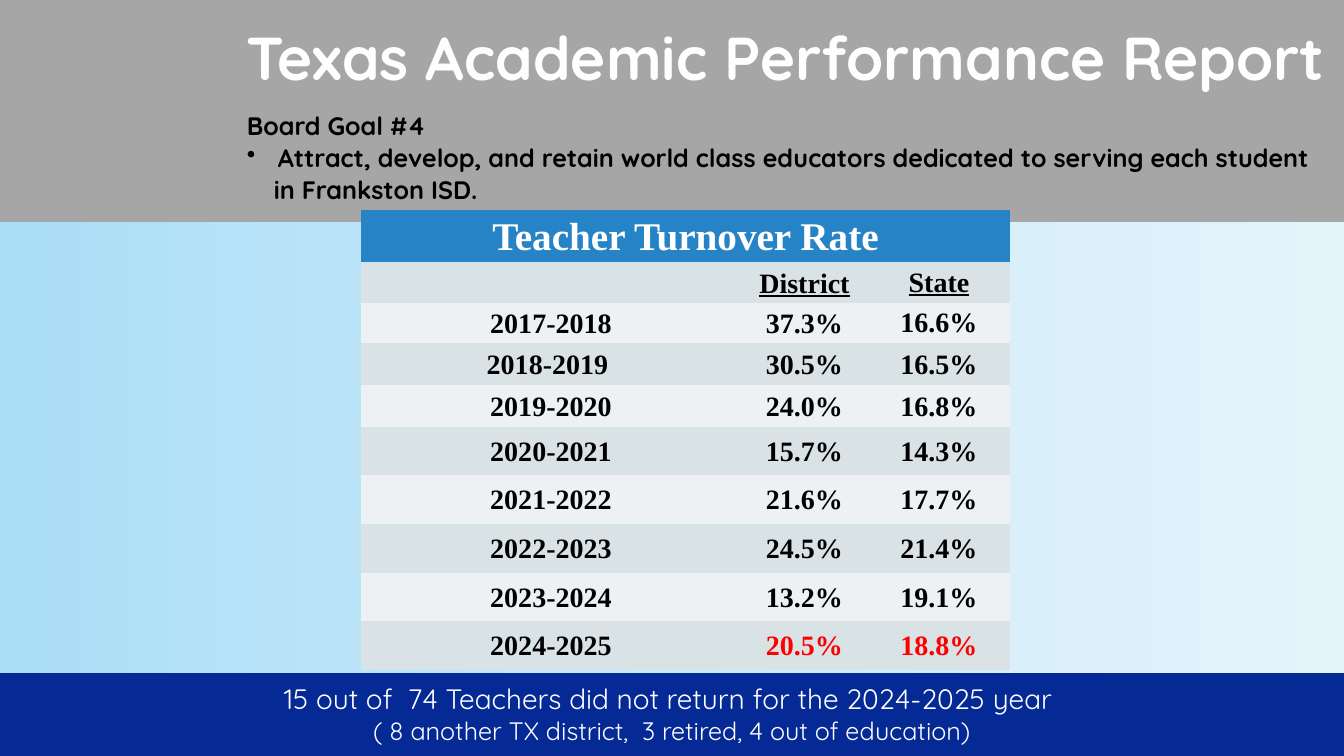
"""Build the teacher turnover slide of an academic performance report."""
from copy import deepcopy
from dataclasses import dataclass

from lxml import etree
from pptx import Presentation
from pptx.dml.color import RGBColor
from pptx.enum.shapes import MSO_SHAPE
from pptx.enum.text import MSO_ANCHOR, PP_ALIGN
from pptx.oxml.ns import qn
from pptx.shapes.autoshape import Shape
from pptx.slide import Slide
from pptx.table import _Cell
from pptx.text.text import _Paragraph
from pptx.util import Emu, Pt

RECTANGLE = MSO_SHAPE.RECTANGLE
LEFT, CENTER = PP_ALIGN.LEFT, PP_ALIGN.CENTER
MIDDLE = MSO_ANCHOR.MIDDLE

SLIDE_WIDTH, SLIDE_HEIGHT = 1344, 756
EMU_PER_PX = 12192000 / SLIDE_WIDTH

NAVY = RGBColor(0x06, 0x2A, 0x95)
GRAY = RGBColor(0xA6, 0xA6, 0xA6)
SKY_STOPS = (
    RGBColor(0xAA, 0xDE, 0xF7),
    RGBColor(0xCA, 0xE9, 0xF9),
    RGBColor(0xE5, 0xF4, 0xFB),
)
OFF_WHITE = RGBColor(0xFE, 0xFE, 0xFE)
WHITE = RGBColor(0xFF, 0xFF, 0xFF)
BLACK = RGBColor(0x00, 0x00, 0x00)
RED = RGBColor(0xFF, 0x00, 0x00)
HEADER_BLUE = RGBColor(0x26, 0x83, 0xC6)
BANDS = (RGBColor(0xD9, 0xE3, 0xE5), RGBColor(0xED, 0xF1, 0xF3))

HEADING_FONT, TABLE_FONT = "Quicksand", "Times New Roman"
PLAIN_TABLE_STYLE = "{2D5ABB26-0587-4C30-8999-92F81FD0307C}"
LINE_SPACING = 1.07
GOAL_HANG, GOAL_INDENT = 31, 27
CELL_MARGIN = 7

COLUMN_WIDTHS = (380, 127, 142)
ROW_HEIGHTS = (52, 41, 40, 42, 42, 48, 49, 49, 48, 49)
TABLE_ROWS = (
    ("", "District", "State"),
    ("2017-2018", "37.3%", "16.6%"),
    ("2018-2019 ", "30.5%", "16.5%"),
    ("2019-2020", "24.0%", "16.8%"),
    ("2020-2021", "15.7%", "14.3%"),
    ("2021-2022", "21.6%", "17.7%"),
    ("2022-2023", "24.5%", "21.4%"),
    ("2023-2024", "13.2%", "19.1%"),
    ("2024-2025", "20.5%", "18.8%"),
)


@dataclass(frozen=True)
class Line:
    """One paragraph of text with its style."""

    text: str
    size: float
    color: RGBColor
    font: str = HEADING_FONT
    bold: bool = True
    underline: bool = False
    align: PP_ALIGN = LEFT
    spacing: float = 1.0
    indent: int = 0
    bullet: str = ""


@dataclass(frozen=True)
class TextBlock:
    """A text box and its paragraphs."""

    left: int
    top: int
    width: int
    height: int
    lines: tuple[Line, ...]


TEXT_BLOCKS = (
    TextBlock(237, 15, 1117, 113, (
        Line("Texas Academic Performance Report", 43.2, OFF_WHITE),
    )),
    TextBlock(237, 103, 1318, 108, (
        Line("Board Goal #4", 18, BLACK, spacing=LINE_SPACING),
        Line("Attract, develop, and retain world class educators dedicated to "
             "serving each student", 18, BLACK, spacing=LINE_SPACING,
             indent=GOAL_HANG, bullet="•"),
        Line("in Frankston ISD.", 18, BLACK, spacing=LINE_SPACING,
             indent=GOAL_INDENT),
    )),
    TextBlock(0, 677, SLIDE_WIDTH, 75, (
        Line("15 out of  74 Teachers did not return for the 2024-2025 year ",
             20, WHITE, bold=False, align=CENTER),
        Line("( 8 another TX district,  3 retired, 4 out of education)",
             18, WHITE, bold=False, align=CENTER),
    )),
)


def px(length: int) -> Emu:
    """Turn whole px into EMU."""
    return Emu(round(length * EMU_PER_PX))


def write_line(paragraph: _Paragraph, line: Line) -> None:
    """Write one styled line into a paragraph."""
    paragraph.alignment = line.align
    paragraph.line_spacing = line.spacing
    properties = paragraph._p.get_or_add_pPr()
    if line.indent:
        properties.set("marL", str(px(line.indent)))
    if line.bullet:
        properties.set("indent", str(-px(line.indent)))
        etree.SubElement(properties, qn("a:buChar"), char=line.bullet)
    run = paragraph.add_run()
    run.text = line.text
    run.font.name = line.font
    run.font.size = Pt(line.size)
    run.font.bold = line.bold
    run.font.underline = line.underline
    run.font.color.rgb = line.color


def add_text_block(slide: Slide, block: TextBlock) -> None:
    """Add a wrapped text box with its lines."""
    box = slide.shapes.add_textbox(
        px(block.left), px(block.top), px(block.width), px(block.height))
    frame = box.text_frame
    frame.word_wrap = True
    for index, line in enumerate(block.lines):
        paragraph = frame.add_paragraph() if index else frame.paragraphs[0]
        write_line(paragraph, line)


def add_band(slide: Slide, top: int, height: int) -> Shape:
    """Add a borderless band across the slide."""
    band = slide.shapes.add_shape(
        RECTANGLE, 0, px(top), px(SLIDE_WIDTH), px(height))
    band.shadow.inherit = False
    band.line.fill.background()
    return band


def fill_sky(band: Shape) -> None:
    """Fill a band with the three-stop sky gradient."""
    band.fill.gradient()
    band.fill.gradient_angle = 0
    stop_list = band._element.spPr.find(qn("a:gradFill")).find(qn("a:gsLst"))
    stop_list.insert(1, deepcopy(stop_list[0]))
    for index, (stop, color) in enumerate(
            zip(band.fill.gradient_stops, SKY_STOPS)):
        stop.position = index / (len(SKY_STOPS) - 1)
        stop.color.rgb = color


def fill_cell(cell: _Cell, fill: RGBColor, line: Line) -> None:
    """Colour a table cell and write its line."""
    cell.fill.solid()
    cell.fill.fore_color.rgb = fill
    cell.vertical_anchor = MIDDLE
    cell.margin_left = cell.margin_right = px(CELL_MARGIN)
    cell.margin_top = cell.margin_bottom = 0
    write_line(cell.text_frame.paragraphs[0], line)


def add_turnover_table(slide: Slide) -> None:
    """Add the turnover rates of district and state by year."""
    table = slide.shapes.add_table(
        len(ROW_HEIGHTS), len(COLUMN_WIDTHS), px(361), px(210),
        px(sum(COLUMN_WIDTHS)), px(sum(ROW_HEIGHTS))).table
    table._tbl.tblPr.find(qn("a:tableStyleId")).text = PLAIN_TABLE_STYLE
    table.first_row = table.horz_banding = False
    for column, width in zip(table.columns, COLUMN_WIDTHS):
        column.width = px(width)
    for row, height in zip(table.rows, ROW_HEIGHTS):
        row.height = px(height)

    heading = table.cell(0, 0)
    heading.merge(table.cell(0, len(COLUMN_WIDTHS) - 1))
    fill_cell(heading, HEADER_BLUE, Line(
        "Teacher Turnover Rate", 28, WHITE, TABLE_FONT,
        align=CENTER, spacing=LINE_SPACING))
    for row_index, texts in enumerate(TABLE_ROWS):
        is_latest = row_index == len(TABLE_ROWS) - 1
        for column_index, text in enumerate(texts):
            is_single_spaced = column_index == 2 and row_index < 2
            fill_cell(
                table.cell(row_index + 1, column_index),
                BANDS[row_index % 2],
                Line(text, 20, RED if is_latest and column_index else BLACK,
                     TABLE_FONT, underline=row_index == 0, align=CENTER,
                     spacing=1.0 if is_single_spaced else LINE_SPACING))


def main() -> None:
    """Build and save the slide."""
    presentation = Presentation()
    presentation.slide_width = px(SLIDE_WIDTH)
    presentation.slide_height = px(SLIDE_HEIGHT)
    slide = presentation.slides.add_slide(presentation.slide_layouts[6])
    slide.background.fill.solid()
    slide.background.fill.fore_color.rgb = NAVY
    header = add_band(slide, 0, 222)
    header.fill.solid()
    header.fill.fore_color.rgb = GRAY
    fill_sky(add_band(slide, 222, 451))
    title, goal, footer = TEXT_BLOCKS
    add_text_block(slide, title)
    add_text_block(slide, goal)
    add_turnover_table(slide)
    add_text_block(slide, footer)
    presentation.save("out.pptx")


if __name__ == "__main__":
    main()
